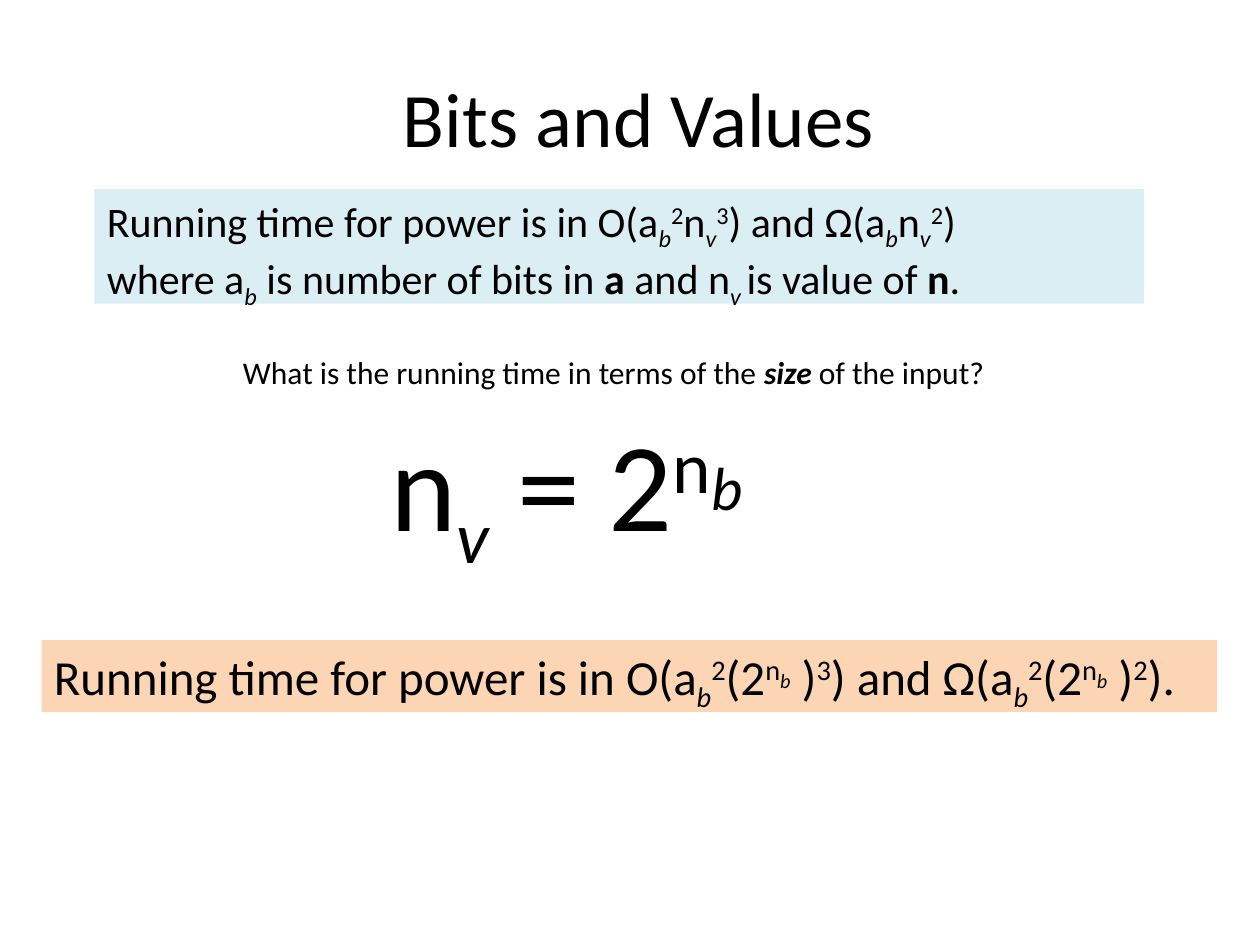
from dataclasses import dataclass

from pptx import Presentation
from pptx.dml.color import RGBColor
from pptx.enum.shapes import MSO_SHAPE as Shape
from pptx.enum.text import MSO_ANCHOR as Anchor, MSO_AUTO_SIZE as AutoSize, PP_ALIGN as Align
from pptx.util import Inches, Pt


@dataclass(frozen=True)
class Theme:
    """Colours, font and type sizes of the slide."""
    font: str = "Calibri"
    text: RGBColor = RGBColor(0x00, 0x00, 0x00)
    given: RGBColor = RGBColor(0xDB, 0xEE, 0xF4)
    result: RGBColor = RGBColor(0xFC, 0xD5, 0xB5)
    title_size: int = 44
    given_size: int = 24
    question_size: int = 18
    equation_size: int = 72
    equation_index_size: int = 60
    result_size: int = 28
    result_index_size: int = 20


@dataclass(frozen=True)
class Style:
    """Character style of one run; the baseline shift is in percent."""
    bold: bool = False
    italic: bool = False
    baseline: int = 0
    size: int = 0


THEME = Theme()
PLAIN = Style()
BOLD = Style(bold=True)
STRONG = Style(bold=True, italic=True)
SUB = Style(italic=True, baseline=-25)
SUP = Style(baseline=30)


def index_style(size):
    """Return the style of a subscript inside an exponent."""
    return Style(italic=True, baseline=20, size=size)


def add_styled_run(paragraph, text, style, size):
    """Append one run in the given style."""
    run = paragraph.add_run()
    run.text = text
    font = run.font
    font.name = THEME.font
    font.size = Pt(style.size or size)
    font.color.rgb = THEME.text
    font.bold = style.bold
    font.italic = style.italic
    if style.baseline:
        run._r.get_or_add_rPr().set("baseline", str(style.baseline * 1000))


def fill_text(shape, lines, size, align=Align.LEFT, anchor=Anchor.TOP, wrap=True, grow=True):
    """Write one paragraph per line of (text, style) pairs."""
    frame = shape.text_frame
    frame.word_wrap = wrap
    frame.vertical_anchor = anchor
    frame.auto_size = AutoSize.SHAPE_TO_FIT_TEXT if grow else AutoSize.NONE
    for number, line in enumerate(lines):
        paragraph = frame.add_paragraph() if number else frame.paragraphs[0]
        paragraph.alignment = align
        for text, style in line:
            add_styled_run(paragraph, text, style, size)


def add_text(slide, left, top, width, height, lines, size, **options):
    """Add a plain text box."""
    box = slide.shapes.add_textbox(Inches(left), Inches(top), Inches(width), Inches(height))
    fill_text(box, lines, size, **options)


def add_panel(slide, left, top, width, height, color, lines, size):
    """Add a filled rectangle with text."""
    panel = slide.shapes.add_shape(
        Shape.RECTANGLE, Inches(left), Inches(top), Inches(width), Inches(height))
    panel.shadow.inherit = False
    panel.fill.solid()
    panel.fill.fore_color.rgb = color
    panel.line.fill.background()
    fill_text(panel, lines, size)


def bound_terms(exponent):
    """Return the runs of the bound a_b^2 (2^n_b)^exponent."""
    return [("b", SUB), ("2", SUP), ("(2", PLAIN), ("n", SUP),
            ("b", index_style(THEME.result_index_size)), (" )", PLAIN), (exponent, SUP)]


def main():
    """Build the slide and save it."""
    presentation = Presentation()
    presentation.slide_width = Inches(10)
    presentation.slide_height = Inches(7.5)
    slide = presentation.slides.add_slide(presentation.slide_layouts[6])

    add_text(slide, 0.5, 0.3, 9, 1.25, [[(" Bits and Values", PLAIN)]], THEME.title_size,
             align=Align.CENTER, anchor=Anchor.MIDDLE, grow=False)

    given = [
        [("Running time for power is in O(a", PLAIN), ("b", SUB), ("2", SUP), ("n", PLAIN),
         ("v", SUB), ("3", SUP), (") and Ω(a", PLAIN), ("b", SUB), ("n", PLAIN),
         ("v", SUB), ("2", SUP), (")", PLAIN)],
        [("where a", PLAIN), ("b", SUB), (" is number of bits in ", PLAIN), ("a", BOLD),
         (" and n", PLAIN), ("v ", SUB), ("is value of ", PLAIN), ("n", BOLD), (".", PLAIN)],
    ]
    add_panel(slide, 0.75, 1.5, 8.33, 0.91, THEME.given, given, THEME.given_size)

    question = [("What is the running time in terms of the ", PLAIN), ("size", STRONG),
                (" of the input?", PLAIN)]
    add_text(slide, 1.83, 2.75, 6.15, 0.4, [question], THEME.question_size, wrap=False)

    equation = [("n", PLAIN), ("v", SUB), (" = 2", PLAIN), ("n", SUP),
                ("b", index_style(THEME.equation_index_size)), (" ", SUB)]
    add_text(slide, 3, 3.17, 3.36, 1.31, [equation], THEME.equation_size, wrap=False)

    result = [("Running time for power is in O(a", PLAIN), *bound_terms("3"),
              (") and Ω(a", PLAIN), *bound_terms("2"), (").", PLAIN)]
    add_panel(slide, 0.33, 5.08, 9.33, 0.57, THEME.result, [result], THEME.result_size)

    presentation.save("out.pptx")


if __name__ == "__main__":
    main()
